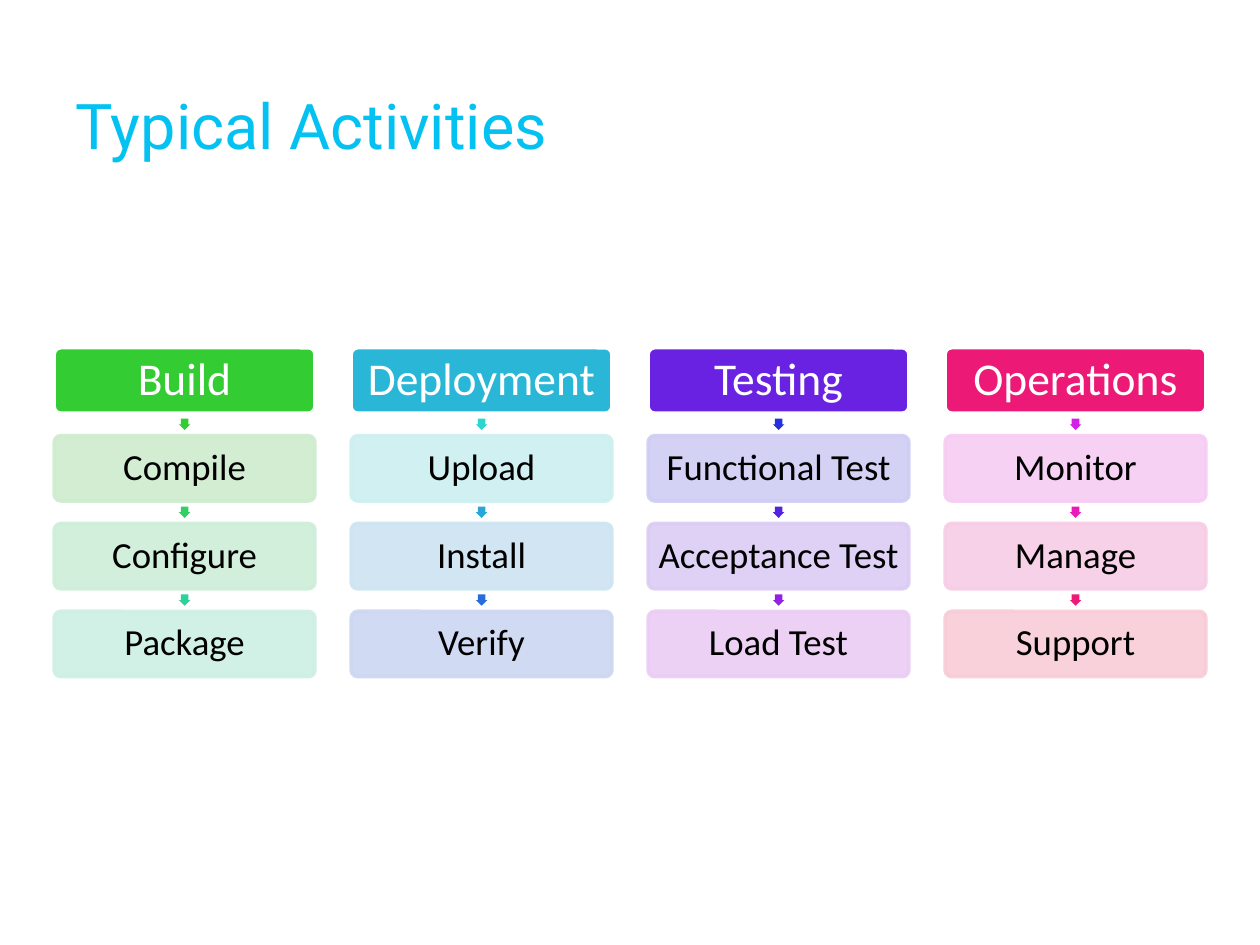
from lxml.etree import SubElement
from pptx import Presentation
from pptx.dml.color import RGBColor
from pptx.enum.shapes import MSO_SHAPE as Shape
from pptx.enum.text import MSO_ANCHOR as Anchor, PP_ALIGN as Align
from pptx.oxml.ns import qn
from pptx.util import Pt

LEFT, TOP = 31, 198.7
BOX_WIDTH, BOX_HEIGHT = 149, 37.4
COLUMN_STEP, ROW_STEP = 169.7, 50.2
ARROW_SIZE = 6.5

PHASES = [
    ("Build", "33CC33", [("Compile", "CEECCE", "33CC33"),
                         ("Configure", "CDEED8", "31CF64"),
                         ("Package", "CDEFE4", "2ED298")]),
    ("Deployment", "2AB7D7", [("Upload", "CDEFF0", "2CD5D0"),
                              ("Install", "CDE4F1", "29A5D8"),
                              ("Verify", "CDD7F2", "276CDB")]),
    ("Testing", "6921E2", [("Functional Test", "CFCDF3", "2530DE"),
                           ("Acceptance Test", "DCCCF4", "5522E1"),
                           ("Load Test", "EBCCF5", "9320E4")]),
    ("Operations", "ED1977", [("Monitor", "F6CCF3", "D51EE7"),
                              ("Manage", "F7CCE5", "EA1BBA"),
                              ("Support", "F8CCD6", "ED1977")]),
]


def paint(fill, color, opacity=100):
    """Fill with a solid hex colour at an opacity in percent."""
    fill.solid()
    fill.fore_color.rgb = RGBColor.from_string(color)
    if opacity < 100:
        for element in fill._xPr.iter(qn("a:srgbClr")):
            SubElement(element, qn("a:alpha"), val=str(opacity * 1000))


def add_text(paragraph, text, font_name, size, color):
    """Add one formatted run to a paragraph."""
    run = paragraph.add_run()
    run.text = text
    run.font.name = font_name
    run.font.size = Pt(size)
    paint(run.font.fill, color)


def add_title(slide, text):
    """Place and fill the title placeholder."""
    title = slide.shapes.title
    title.left, title.top, title.width, title.height = Pt(36), Pt(26), Pt(648), Pt(90)
    title.text_frame.vertical_anchor = Anchor.MIDDLE
    paragraph = title.text_frame.paragraphs[0]
    paragraph.alignment = Align.LEFT
    add_text(paragraph, text, "Roboto", 36, "03C2F1")


def add_box(slide, left, top, text, size, text_color, fill, line, opacity=100):
    """Add a rounded box with a centred label."""
    box = slide.shapes.add_shape(Shape.ROUNDED_RECTANGLE, Pt(left), Pt(top),
                                 Pt(BOX_WIDTH), Pt(BOX_HEIGHT))
    box.adjustments[0] = 0.1
    box.shadow.inherit = False
    paint(box.fill, fill, opacity)
    paint(box.line.fill, line, opacity)
    box.line.width = Pt(2)
    frame = box.text_frame
    frame.word_wrap = True
    frame.vertical_anchor = Anchor.MIDDLE
    frame.margin_left = frame.margin_right = Pt(3.3)
    frame.margin_top = frame.margin_bottom = Pt(3.3)
    paragraph = frame.paragraphs[0]
    paragraph.alignment = Align.CENTER
    paragraph.line_spacing = 0.9
    add_text(paragraph, text, "Calibri", size, text_color)


def add_arrow(slide, box_left, box_top, color):
    """Add a downward arrow centred in the gap above a box."""
    left = box_left + (BOX_WIDTH - ARROW_SIZE) / 2
    top = box_top - (ROW_STEP - BOX_HEIGHT + ARROW_SIZE) / 2
    arrow = slide.shapes.add_shape(Shape.RIGHT_ARROW, Pt(left), Pt(top),
                                   Pt(ARROW_SIZE), Pt(ARROW_SIZE))
    arrow.rotation = 90
    arrow.adjustments[0] = 0.67
    arrow.adjustments[1] = 0.5
    arrow.shadow.inherit = False
    paint(arrow.fill, color)
    arrow.line.fill.background()


def add_phase(slide, left, name, color, activities):
    """Add a column with a heading and its activities."""
    add_box(slide, left, TOP, name, 26, "FFFFFF", color, "FFFFFF")
    for row, (activity, tint, arrow_color) in enumerate(activities, start=1):
        top = TOP + row * ROW_STEP
        add_arrow(slide, left, top, arrow_color)
        add_box(slide, left, top, activity, 21, "000000", tint, tint, opacity=90)


def main():
    """Build and save the presentation."""
    presentation = Presentation()
    presentation.slide_width, presentation.slide_height = Pt(720), Pt(540)
    slide = presentation.slides.add_slide(presentation.slide_layouts[5])
    add_title(slide, "Typical Activities")
    for column, (name, color, activities) in enumerate(PHASES):
        add_phase(slide, LEFT + column * COLUMN_STEP, name, color, activities)
    presentation.save("out.pptx")


if __name__ == "__main__":
    main()
